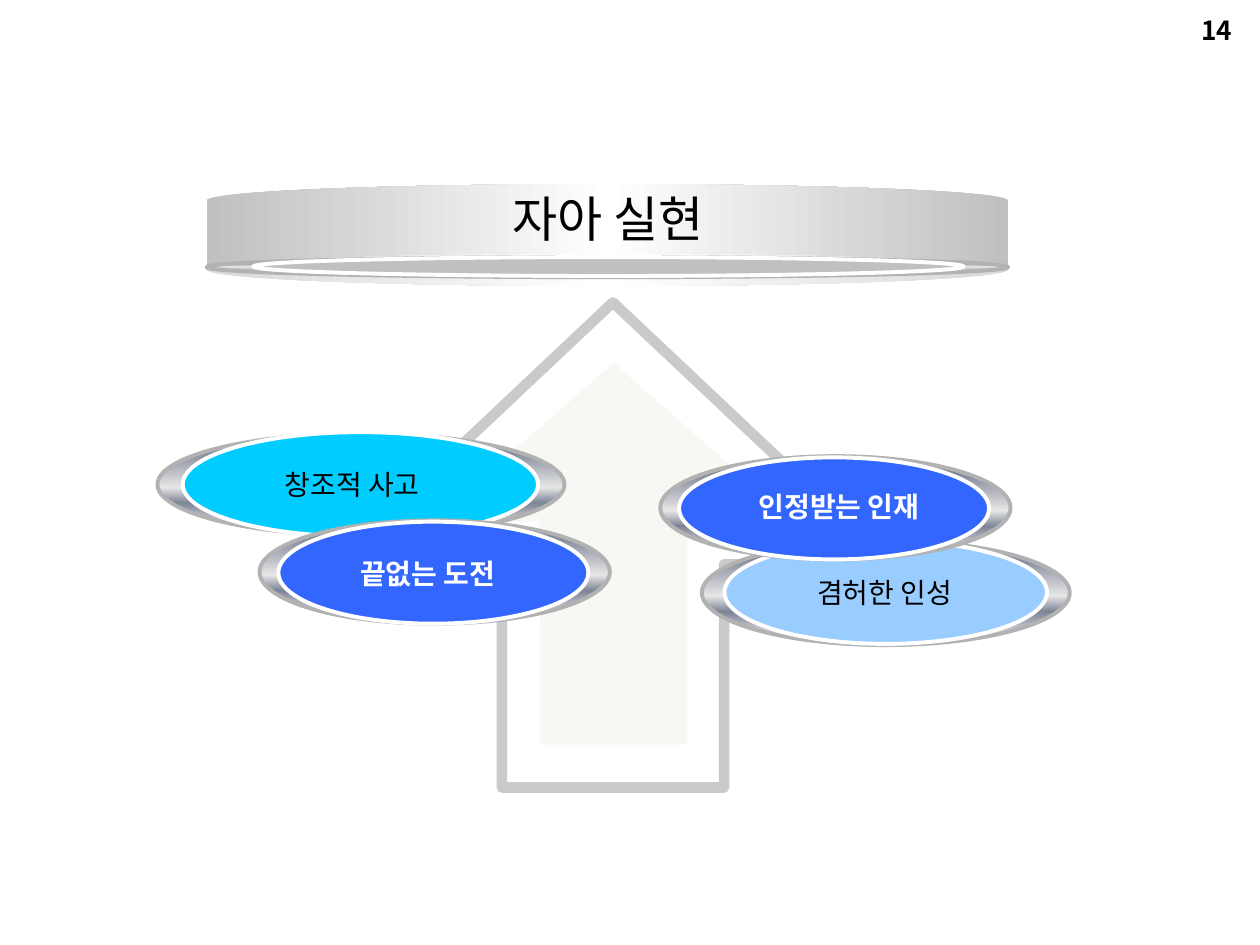
from dataclasses import dataclass

from lxml import etree
from pptx import Presentation
from pptx.dml.color import RGBColor
from pptx.enum.shapes import MSO_SHAPE
from pptx.enum.text import MSO_ANCHOR, MSO_AUTO_SIZE, PP_ALIGN
from pptx.oxml.ns import qn
from pptx.util import Inches, Pt

ELLIPSE, CAN, UP_ARROW = MSO_SHAPE.OVAL, MSO_SHAPE.CAN, MSO_SHAPE.UP_ARROW
CENTER, RIGHT = PP_ALIGN.CENTER, PP_ALIGN.RIGHT
TOP, MIDDLE = MSO_ANCHOR.TOP, MSO_ANCHOR.MIDDLE
FIT_SHAPE = MSO_AUTO_SIZE.SHAPE_TO_FIT_TEXT


@dataclass(frozen=True)
class Theme:
    korean: str = "Noto Sans CJK KR"
    latin: str = "Arial"
    black: str = "000000"
    white: str = "FFFFFF"
    silver: str = "C0C0C0"
    rim_line: str = "B2B2B2"
    arrow_line: str = "969696"
    arrow_fill: str = "EEECE1"
    cyan: str = "00CCFF"
    blue: str = "3366FF"
    light_blue: str = "99CCFF"
    title_size: int = 28
    label_size: int = 16
    number_size: int = 15
    rim_width: float = 2.25


THEME = Theme()
# Gradients: colour stops and clockwise angle
METAL = ([(0, "E6E6E6"), (15, "7D8496"), (53, "E6E6E6"), (68, "7D8496"),
          (93, "E6E6E6"), (100, "FFFFFF")], 90)
BAND = ([(0, THEME.silver), (50, THEME.white), (100, THEME.silver)], 0)


def add_shape(shapes, kind, box, fill=None, line=None, width=THEME.rim_width, opacity=100):
    """Add a preset shape; fill is a colour, a gradient or None."""
    shape = shapes.add_shape(kind, *map(Inches, box))
    shape.shadow.inherit = False
    if fill is None:
        shape.fill.background()
    elif isinstance(fill, str):
        shape.fill.solid()
        shape.fill.fore_color.rgb = RGBColor.from_string(fill)
    else:
        stops, angle = fill
        shape.fill.gradient()
        shape.fill.gradient_angle = -angle % 360
        stop_list = shape.element.spPr.find(".//" + qn("a:gsLst"))
        for old_stop in list(stop_list):
            stop_list.remove(old_stop)
        for position, color in stops:
            stop = etree.SubElement(stop_list, qn("a:gs"), pos=str(position * 1000))
            etree.SubElement(stop, qn("a:srgbClr"), val=color)
    if line is None:
        shape.line.fill.background()
    else:
        shape.line.color.rgb = RGBColor.from_string(line)
        shape.line.width = Pt(width)
    if opacity < 100:
        for color in shape.element.spPr.iter(qn("a:srgbClr")):
            etree.SubElement(color, qn("a:alpha"), val=str(opacity * 1000))
    return shape


def write_text(shape, text, size, color, bold=False, align=CENTER, anchor=TOP,
               font=THEME.korean, margins=(0.1, 0.05)):
    """Fill a text shape with one formatted run."""
    frame = shape.text_frame
    frame.word_wrap = True
    frame.vertical_anchor = anchor
    frame.margin_left = frame.margin_right = Inches(margins[0])
    frame.margin_top = frame.margin_bottom = Inches(margins[1])
    paragraph = frame.paragraphs[0]
    paragraph.alignment = align
    run = paragraph.add_run()
    run.text = text
    run.font.size = Pt(size)
    run.font.bold = bold
    run.font.name = font
    run.font.color.rgb = RGBColor.from_string(color)
    properties = run.font._element
    etree.SubElement(properties, qn("a:ea"), typeface=THEME.korean)
    return properties


presentation = Presentation()
presentation.slide_width, presentation.slide_height = Inches(10), Inches(7.5)
slide = presentation.slides.add_slide(presentation.slide_layouts[5])
title = slide.shapes.title

# Page number
number = slide.shapes.add_textbox(*map(Inches, (7.55, 0.11, 2.33, 0.25)))
write_text(number, "14", THEME.number_size, THEME.black, bold=True, align=RIGHT,
           margins=(0.1, 0))

# Upward arrow: outline and pale core
arrows = slide.shapes.add_group_shape()
outline = add_shape(arrows.shapes, UP_ARROW, (2.66, 2.4, 4.41, 3.85),
                    line=THEME.arrow_line, width=6, opacity=50)
outline.adjustments[0], outline.adjustments[1] = 0.4, 0.54
core = add_shape(arrows.shapes, UP_ARROW, (3.44, 2.88, 2.86, 3.03),
                 fill=THEME.arrow_fill, opacity=39)
core.adjustments[0], core.adjustments[1] = 0.41, 0.44

# Value buttons: metal rim, coloured face and label
buttons = [
    ("겸허한 인성", (5.57, 4.29, 2.92, 0.83), (5.75, 4.29, 2.56, 0.82),
     (6.32, 4.52, 1.4, 0.37), THEME.light_blue, THEME.black, False),
    ("창조적 사고", (1.25, 3.44, 3.23, 0.81), (1.45, 3.43, 2.82, 0.83),
     (2.1, 3.66, 1.39, 0.37), THEME.cyan, THEME.black, False),
    ("끝없는 도전", (2.06, 4.13, 2.78, 0.82), (2.21, 4.14, 2.46, 0.81),
     (2.53, 4.37, 1.73, 0.37), THEME.blue, THEME.white, True),
    ("인정받는 인재", (5.24, 3.62, 2.78, 0.82), (5.39, 3.63, 2.46, 0.81),
     (5.4, 3.84, 2.52, 0.37), THEME.blue, THEME.white, True),
]
for text, rim_box, face_box, label_box, face_color, text_color, bold in buttons:
    button = slide.shapes.add_group_shape()
    add_shape(button.shapes, ELLIPSE, rim_box, METAL, THEME.rim_line)
    add_shape(button.shapes, ELLIPSE, face_box, face_color, THEME.white)
    label = slide.shapes.add_textbox(*map(Inches, label_box))
    write_text(label, text, THEME.label_size, text_color, bold)
    label.text_frame.word_wrap = bold
    label.text_frame.auto_size = FIT_SHAPE

# Silver drum turned upside down
drum = slide.shapes.add_group_shape()
band = add_shape(drum.shapes, CAN, (1.64, 1.46, 6.36, 0.81), BAND)
band.adjustments[0] = 0.32
rim = add_shape(drum.shapes, ELLIPSE, (1.64, 2.04, 6.36, 0.16), METAL, THEME.rim_line)
face = add_shape(drum.shapes, ELLIPSE, (2.01, 2.04, 5.64, 0.15), THEME.silver, THEME.white)
for part in (band, rim, face):
    part.rotation = 180

# Title on the drum, brought to the front, with a white text shadow
title.left, title.top, title.width, title.height = map(Inches, (1.63, 1.41, 6.39, 0.64))
properties = write_text(title, "자아 실현", THEME.title_size, THEME.black,
                        anchor=MIDDLE, font=THEME.latin, margins=(0, 0))
effects = etree.Element(qn("a:effectLst"))
shadow = etree.SubElement(effects, qn("a:outerShdw"), dist="35921", dir="2700000")
etree.SubElement(shadow, qn("a:srgbClr"), val=THEME.white)
properties.find(qn("a:solidFill")).addnext(effects)
title.element.getparent().append(title.element)

presentation.save("out.pptx")
